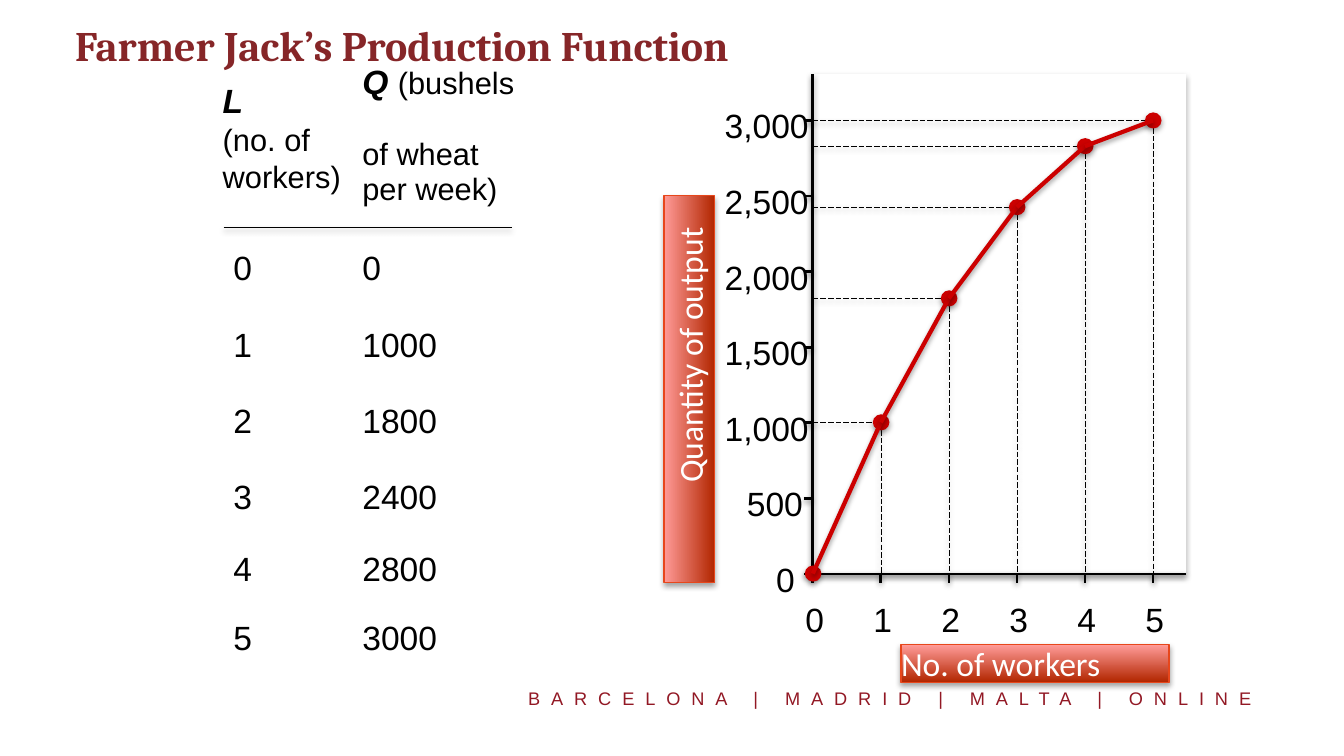
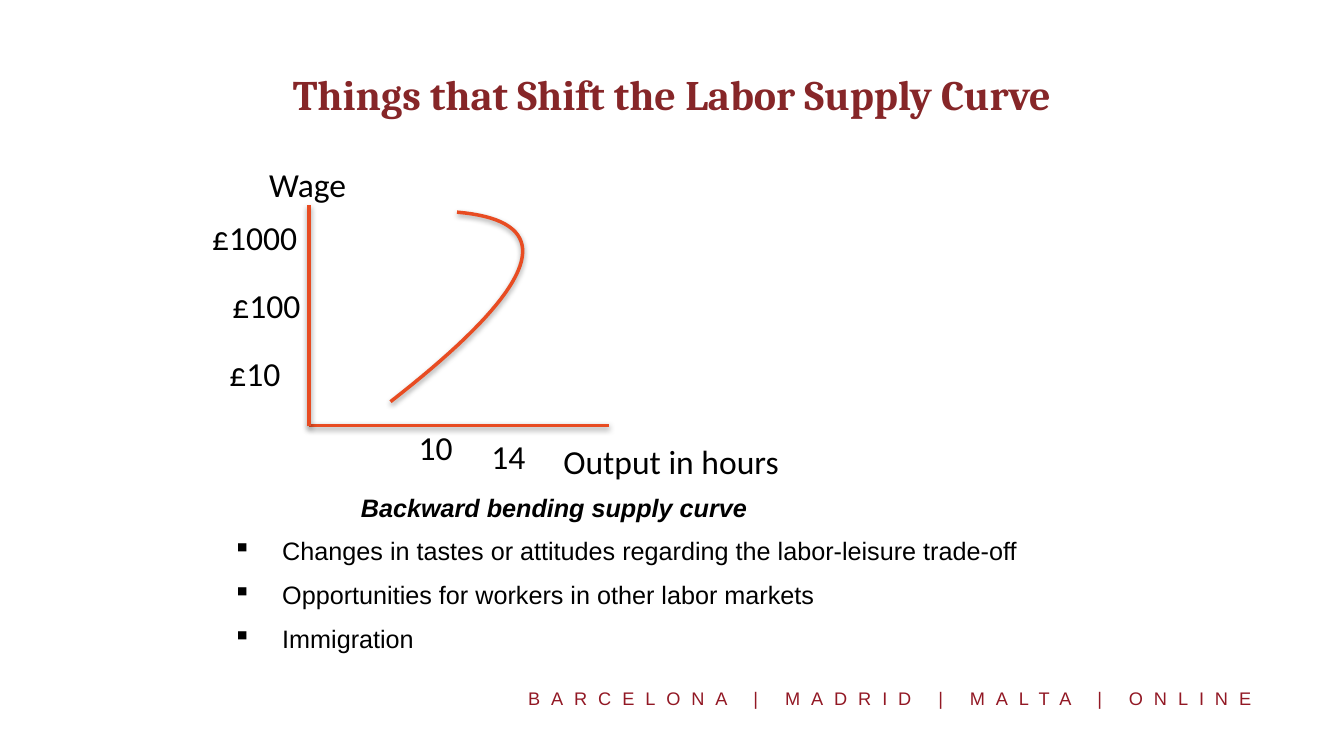
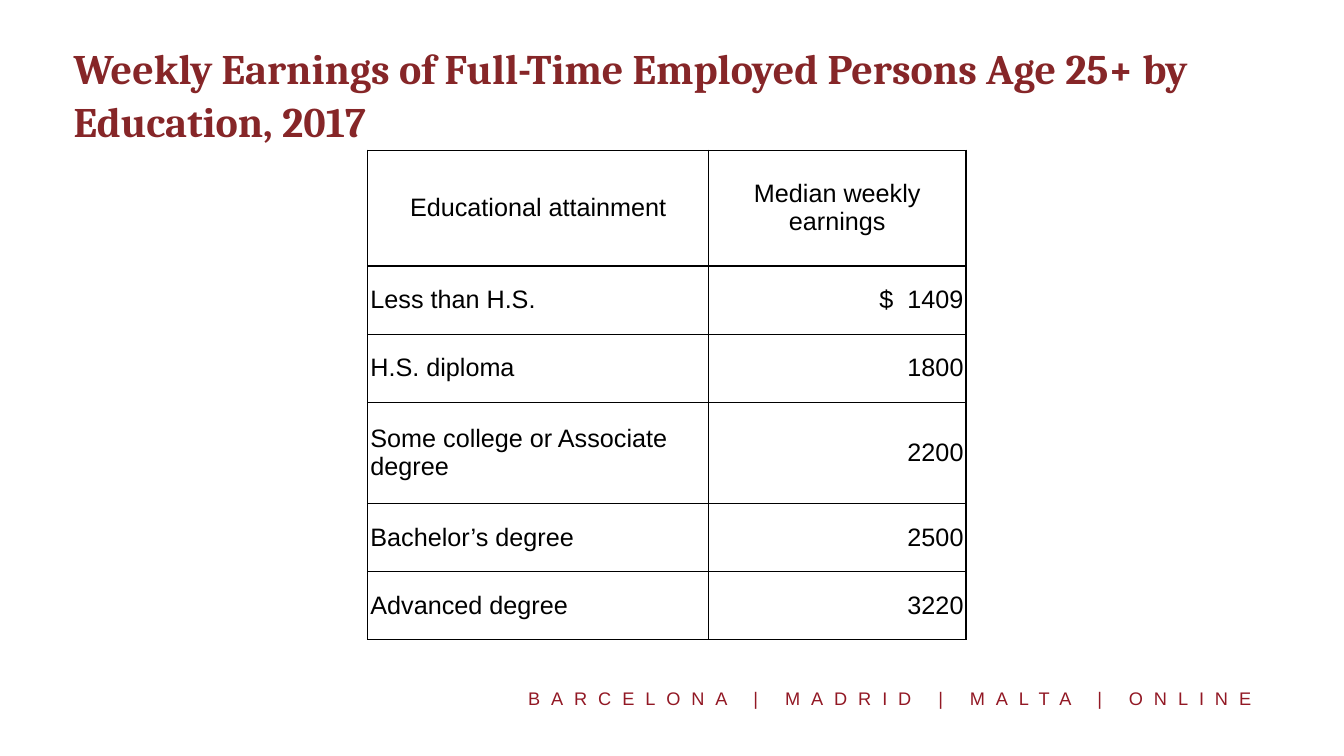
from lxml.etree import SubElement
from pptx import Presentation
from pptx.dml.color import RGBColor
from pptx.enum.dml import MSO_LINE
from pptx.enum.shapes import MSO_CONNECTOR, MSO_SHAPE
from pptx.enum.text import MSO_ANCHOR, MSO_AUTO_SIZE, PP_ALIGN
from pptx.oxml.ns import qn
from pptx.util import Inches, Pt

COLORS = {
    "title": "862628",
    "footer": "921824",
    "black": "000000",
    "white": "FFFFFF",
    "curve": "CC0000",
    "accent": "E84C22",
    "label_border": "E7471C",
    "label_dark": "B22600",
    "label_light": "FF9B98",
}
INSET = 0.13
ORIGIN_X, ORIGIN_Y = 16.13, 11.39
STEP_X, STEP_Y = 1.35, 1.5
WORKERS_OUTPUT = [(0, 0), (1, 1000), (2, 1800), (3, 2400), (4, 2800), (5, 3000)]
POINT_TOPS = [11.38, 8.38, 5.92, 4.11, 2.9, 2.39]
ROW_TOPS = [4.89, 6.43, 7.94, 9.45, 10.88, 12.24]
EARNINGS = [
    ("Educational attainment", "Median weekly earnings"),
    ("Less than H.S.", "$  1409"),
    ("H.S. diploma", "1800"),
    ("Some college or Associate degree", "2200"),
    ("Bachelor’s degree", "2500"),
    ("Advanced degree", "3220"),
]


def color(name):
    return RGBColor.from_string(COLORS[name])


def inches(*lengths):
    return [Inches(length) for length in lengths]


def style_font(font, size, name="Arial", fill="black", bold=False, italic=False):
    font.size = Pt(size)
    font.name = name
    font.bold = bold
    font.italic = italic
    font.color.rgb = color(fill)


def add_shadow(shape, opacity=38):
    effects = SubElement(shape._element.spPr, qn("a:effectLst"))
    shadow = SubElement(effects, qn("a:outerShdw"), blurRad=str(Pt(8)), dist=str(Pt(4)),
                        dir="5400000", rotWithShape="0")
    shade = SubElement(shadow, qn("a:srgbClr"), val=COLORS["black"])
    SubElement(shade, qn("a:alpha"), val=str(opacity * 1000))


def set_frame(frame, inset, wrap=True):
    frame.margin_left = frame.margin_right = Inches(inset)
    frame.margin_top = frame.margin_bottom = Inches(inset)
    frame.word_wrap = wrap


def add_frame(slide, box, inset=0, wrap=True):
    frame = slide.shapes.add_textbox(*inches(*box)).text_frame
    set_frame(frame, inset, wrap)
    if not wrap:
        frame.auto_size = MSO_AUTO_SIZE.SHAPE_TO_FIT_TEXT
    return frame


def add_text(slide, text, box, size=48, inset=0, wrap=True, **style):
    frame = add_frame(slide, box, inset, wrap)
    paragraph = frame.paragraphs[0]
    paragraph.text = text
    style_font(paragraph.font, size, **style)
    return frame


def add_title(slide, text, box=(1.33, 0.2, 24, 3.3), align=PP_ALIGN.LEFT, spacing=1.0):
    frame = add_text(slide, text, box, 60, INSET, name="Cambria", fill="title", bold=True)
    frame.vertical_anchor = MSO_ANCHOR.MIDDLE
    frame.paragraphs[0].alignment = align
    frame.paragraphs[0].line_spacing = spacing


def add_footer(slide):
    frame = add_text(slide, "BARCELONA | MADRID | MALTA | ONLINE", (10.35, 13.5, 14.85, 0.69),
                     26, INSET, wrap=False, fill="footer")
    properties = frame.paragraphs[0]._p.get_or_add_pPr()
    properties.find(qn("a:defRPr")).set("spc", "1560")


def add_line(slide, start, end, width=4, stroke="black", dash=None):
    line = slide.shapes.add_connector(MSO_CONNECTOR.STRAIGHT, *inches(*start, *end))
    line.line.color.rgb = color(stroke)
    line.line.width = Pt(width)
    if dash:
        line.line.dash_style = dash
    add_shadow(line)


def add_filled_shape(slide, kind, box, fill):
    shape = slide.shapes.add_shape(kind, *inches(*box))
    shape.fill.solid()
    shape.fill.fore_color.rgb = color(fill)
    shape.line.fill.background()
    add_shadow(shape, 35)


def add_axis_label(slide, text, box, rotation=0, indent=0):
    label = slide.shapes.add_shape(MSO_SHAPE.RECTANGLE, *inches(*box))
    label.rotation = rotation
    label.fill.gradient()
    label.fill.gradient_angle = 90
    for stop, name in zip(label.fill.gradient_stops, ("label_dark", "label_light")):
        stop.color.rgb = color(name)
    label.line.color.rgb = color("label_border")
    label.line.width = Pt(2)
    add_shadow(label, 35)
    frame = label.text_frame
    set_frame(frame, 0)
    frame.margin_left = Inches(indent)
    frame.vertical_anchor = MSO_ANCHOR.MIDDLE
    paragraph = frame.paragraphs[0]
    paragraph.text = text
    paragraph.alignment = PP_ALIGN.LEFT
    style_font(paragraph.font, 48, "Calibri", "white")


def add_column_heading(slide, box, lines, gap=0, spacing=1.0):
    frame = add_frame(slide, box)
    for index, runs in enumerate(lines):
        paragraph = frame.add_paragraph() if index else frame.paragraphs[0]
        paragraph.line_spacing = spacing
        if index:
            paragraph.space_before = Pt(gap)
        for text, is_symbol in runs:
            run = paragraph.add_run()
            run.text = text
            style_font(run.font, 48 if is_symbol else 44, bold=is_symbol, italic=is_symbol)


def add_output_table(slide):
    for (workers, output), top in zip(WORKERS_OUTPUT, ROW_TOPS):
        add_text(slide, str(workers), (4.63, top, 2.56, 0.81))
        add_text(slide, str(output), (7.19, top, 2.18, 0.81))
    add_column_heading(slide, (7.19, 1.26, 3.11, 3.01),
                       [[("Q ", True), ("(bushels", False)], [("of wheat per week)", False)]],
                       gap=51, spacing=0.95)
    add_column_heading(slide, (4.42, 1.59, 2.78, 2.36),
                       [[("L", True)], [("(no. of workers)", False)]])
    add_line(slide, (4.44, 4.52), (10.16, 4.52), 1)


def add_axes(slide):
    add_filled_shape(slide, MSO_SHAPE.RECTANGLE, (ORIGIN_X, 1.47, 7.41, 9.91), "white")
    add_line(slide, (ORIGIN_X, 1.47), (ORIGIN_X, ORIGIN_Y))
    add_line(slide, (ORIGIN_X, ORIGIN_Y), (23.53, ORIGIN_Y))
    label_lefts = {1: 15.4, 3: 14.82, 5: 14.38}
    for index in range(7):
        y = ORIGIN_Y - STEP_Y * index
        label = f"{500 * index:,}"
        left = label_lefts[len(label)]
        add_line(slide, (ORIGIN_X - 0.18, y), (ORIGIN_X, y))
        add_text(slide, label, (left, y - 0.3, ORIGIN_X - left, 0.7))
    for index in range(6):
        x = ORIGIN_X + STEP_X * index
        add_line(slide, (x, ORIGIN_Y + 0.17), (x, ORIGIN_Y))
        add_text(slide, str(index), (x - 0.15, 11.88, 0.4, 0.61))
    add_axis_label(slide, "No. of workers", (17.88, 12.79, 5.32, 0.75))
    add_axis_label(slide, "Quantity of output", (9.84, 7.22, 7.68, 1), 270, 1.98)


def add_production_curve(slide):
    points = [(ORIGIN_X + STEP_X * index, y) for index, y in enumerate(POINT_TOPS)]
    for x, y in points[1:]:
        add_line(slide, (ORIGIN_X, y), (x, y), 1, dash=MSO_LINE.LONG_DASH)
        add_line(slide, (x, y), (x, ORIGIN_Y), 1, dash=MSO_LINE.LONG_DASH)
    for x, y in points:
        add_filled_shape(slide, MSO_SHAPE.OVAL, (x - 0.16, y - 0.16, 0.33, 0.32), "curve")
    for start, end in zip(points, points[1:]):
        add_line(slide, start, end, 6, "curve")


def add_bezier(slide, controls, steps=40):
    def point(t):
        weights = ((1 - t) ** 3, 3 * t * (1 - t) ** 2, 3 * t ** 2 * (1 - t), t ** 3)
        return inches(*(sum(w * c[axis] for w, c in zip(weights, controls)) for axis in (0, 1)))

    builder = slide.shapes.build_freeform(*point(0))
    builder.add_line_segments([point(step / steps) for step in range(1, steps + 1)], close=False)
    curve = builder.convert_to_shape()
    curve.fill.background()
    curve.line.color.rgb = color("accent")
    curve.line.width = Pt(5)
    add_shadow(curve)


def add_bullets(slide, box, texts):
    frame = add_frame(slide, box, INSET)
    for index, text in enumerate(texts):
        paragraph = frame.add_paragraph() if index else frame.paragraphs[0]
        paragraph.text = text
        properties = paragraph._p.get_or_add_pPr()
        properties.set("marL", str(Inches(0.98)))
        properties.set("indent", str(-Inches(0.98)))
        SubElement(properties, qn("a:buChar"), char="▪")
        if index:
            paragraph.space_before = Pt(20)
        style_font(paragraph.font, 36)


def add_cell_borders(cell):
    properties = cell._tc.get_or_add_tcPr()
    for side in ("lnL", "lnR", "lnT", "lnB"):
        border = SubElement(properties, qn(f"a:{side}"), w=str(Pt(2)))
        fill = SubElement(border, qn("a:solidFill"))
        SubElement(fill, qn("a:srgbClr"), val=COLORS["black"])


def add_earnings_table(slide):
    table = slide.shapes.add_table(len(EARNINGS), 2, *inches(7.3, 2.98, 11.87, 9.7)).table
    table.first_row = table.horz_banding = False
    for column, width in zip(table.columns, (6.76, 5.11)):
        column.width = Inches(width)
    for row, height in zip(table.rows, (2.3, 1.35, 1.35, 2.01, 1.35, 1.35)):
        row.height = Inches(height)
    for row_index, texts in enumerate(EARNINGS):
        for column_index, text in enumerate(texts):
            cell = table.cell(row_index, column_index)
            add_cell_borders(cell)
            cell.fill.solid()
            cell.fill.fore_color.rgb = color("white")
            cell.margin_left = cell.margin_right = Inches(0.05)
            cell.margin_top = cell.margin_bottom = Inches(0.05)
            cell.vertical_anchor = MSO_ANCHOR.MIDDLE
            paragraph = cell.text_frame.paragraphs[0]
            paragraph.text = text
            body_align = PP_ALIGN.RIGHT if column_index else PP_ALIGN.LEFT
            paragraph.alignment = body_align if row_index else PP_ALIGN.CENTER
            style_font(paragraph.font, 36)


def add_slide(presentation):
    slide = presentation.slides.add_slide(presentation.slide_layouts[6])
    add_footer(slide)
    return slide


def build_production_slide(presentation):
    slide = add_slide(presentation)
    add_axes(slide)
    add_output_table(slide)
    add_production_curve(slide)
    add_title(slide, "Farmer Jack’s Production Function", (1.36, 0.24, 16.13, 1.31))


def build_supply_slide(presentation):
    slide = add_slide(presentation)
    add_line(slide, (6.13, 8.44), (12.09, 8.44), 5, "accent")
    add_line(slide, (6.13, 8.46), (6.13, 4.06), 5, "accent")
    add_bezier(slide, [(7.75, 7.97), (10.73, 5.65), (11.17, 4.39), (9.07, 4.21)])
    for text, left, top, width in (
        ("Wage", 5.21, 3.13, 1.81),
        ("Output in hours", 11.05, 8.62, 4.56),
        ("£1000", 4.08, 4.17, 1.97),
        ("£100", 4.48, 5.52, 1.63),
        ("£10", 4.42, 6.87, 1.29),
        ("10", 8.18, 8.34, 0.96),
        ("14", 9.62, 8.52, 0.96),
    ):
        add_text(slide, text, (left, top, width, 0.94), 48, INSET, wrap=False, name="Calibri")
    add_text(slide, "Backward bending supply curve", (7.03, 9.64, 8.15, 0.88), 36, INSET,
             wrap=False, bold=True, italic=True)
    add_title(slide, "Things that Shift the Labor Supply Curve", align=PP_ALIGN.CENTER)
    add_bullets(slide, (4.49, 10.49, 19.28, 2.93), [
        "Changes in tastes or attitudes regarding the labor-leisure trade-off",
        "Opportunities for workers in other labor markets",
        "Immigration",
    ])


def build_earnings_slide(presentation):
    slide = add_slide(presentation)
    add_earnings_table(slide)
    add_title(slide, "Weekly Earnings of Full-Time Employed Persons Age 25+ by Education, 2017",
              spacing=1.05)


def main():
    presentation = Presentation()
    presentation.slide_width, presentation.slide_height = inches(26.67, 15)
    build_production_slide(presentation)
    build_supply_slide(presentation)
    build_earnings_slide(presentation)
    presentation.save("out.pptx")


if __name__ == "__main__":
    main()
